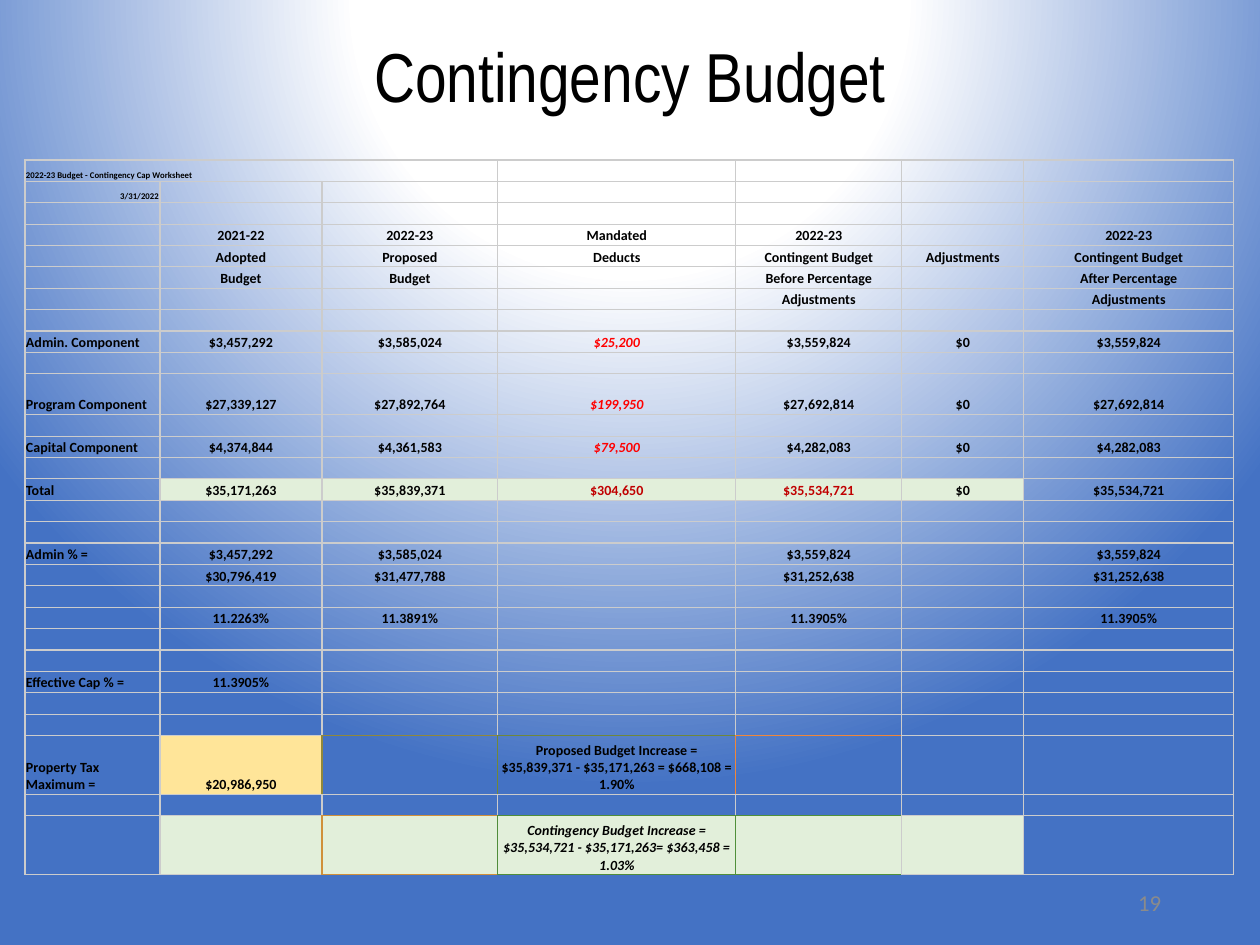
from lxml import etree
from pptx import Presentation
from pptx import util as u
from pptx.dml.color import RGBColor
from pptx.enum import text
from pptx.oxml import parse_xml
from pptx.oxml.ns import nsdecls, qn

COLORS = {"black": "000000", "white": "FFFFFF", "blue": "4472C4", "grid": "CCCCCC",
          "red": "FF0000", "dark_red": "C00000", "green": "E2EFDA",
          "yellow": "FFE599", "page": "8B8B8B"}


def px(n):
    return u.Emu(round(n * 914400 / 126))


def format_text(paragraph, size, color, font="Calibri", align=text.PP_ALIGN.CENTER):
    paragraph.alignment = align
    paragraph.font.name = font
    paragraph.font.size = u.Pt(size)
    paragraph.font.color.rgb = RGBColor.from_string(COLORS[color])


prs = Presentation()
prs.slide_width, prs.slide_height = px(1260), px(945)
slide = prs.slides.add_slide(prs.slide_layouts[5])

# Background: white glow from the top, fading to blue
slide.background.fill.gradient()
glow = slide._element.find(".//" + qn("a:gradFill"))
stops = "".join(f'<a:gs pos="{pos}"><a:srgbClr val="{COLORS[name]}"/></a:gs>'
                for pos, name in ((0, "white"), (35000, "white"), (100000, "blue")))
glow.getparent().replace(glow, parse_xml(
    f'<a:gradFill {nsdecls("a")} rotWithShape="1"><a:gsLst>{stops}</a:gsLst>'
    '<a:path path="circle"><a:fillToRect l="50000" t="-80000" r="50000" b="180000"/>'
    '</a:path></a:gradFill>'))

# Title
title = slide.shapes.title
title.left, title.top, title.width, title.height = px(87), px(43), px(1086), px(74)
title.text_frame.text = "Contingency Budget"
title.text_frame.auto_size = text.MSO_AUTO_SIZE.NONE
title.text_frame.vertical_anchor = text.MSO_ANCHOR.MIDDLE
heading = title.text_frame.paragraphs[0]
heading.line_spacing = 0.9
format_text(heading, 39.6, "black", "Arial Narrow")

# Worksheet content: row number -> cells from the left
worksheet = {
    0: ["2022-23 Budget - Contingency Cap Worksheet"],
    1: ["3/31/2022"],
    3: ["", "2021-22", "2022-23", "Mandated", "2022-23", "", "2022-23"],
    4: ["", "Adopted", "Proposed", "Deducts", "Contingent Budget", "Adjustments",
        "Contingent Budget"],
    5: ["", "Budget", "Budget", "", "Before Percentage", "", "After Percentage"],
    6: ["", "", "", "", "Adjustments", "", "Adjustments"],
    8: ["Admin. Component", "$3,457,292", "$3,585,024", "$25,200", "$3,559,824", "$0",
        "$3,559,824"],
    10: ["Program Component", "$27,339,127", "$27,892,764", "$199,950", "$27,692,814", "$0",
         "$27,692,814"],
    12: ["Capital Component", "$4,374,844", "$4,361,583", "$79,500", "$4,282,083", "$0",
         "$4,282,083"],
    14: ["Total", "$35,171,263", "$35,839,371", "$304,650", "$35,534,721", "$0",
         "$35,534,721"],
    17: ["Admin % =", "$3,457,292", "$3,585,024", "", "$3,559,824", "", "$3,559,824"],
    18: ["", "$30,796,419", "$31,477,788", "", "$31,252,638", "", "$31,252,638"],
    20: ["", "11.2263%", "11.3891%", "", "11.3905%", "", "11.3905%"],
    23: ["Effective Cap % =", "11.3905%"],
    26: ["Property Tax Maximum =", "$20,986,950", "",
         "Proposed Budget Increase = $35,839,371 - $35,171,263 = $668,108 = 1.90%"],
    28: ["", "", "",
         "Contingency Budget Increase = $35,534,721 - $35,171,263= $363,458 = 1.03%"],
}
TOTAL, PROPOSED, CONTINGENCY, ROWS = 14, 26, 28, 29
deducts = {(row, 3) for row in (8, 10, 12)}
fills = {(row, col): "green" for row in (TOTAL, CONTINGENCY) for col in range(1, 6)}
fills[PROPOSED, 1] = "yellow"
text_colors = {cell: "red" for cell in deducts}
text_colors.update({(TOTAL, 3): "dark_red", (TOTAL, 4): "dark_red"})
italics = deducts | {(CONTINGENCY, 3)}

# Coloured edges, shared with the neighbours to the left and above
accents = {PROPOSED: ["90883A", "70873A", "F0873A"],
           CONTINGENCY: ["D0903A", "508D3A", "50903A"]}
edges = {}
for row, row_accents in accents.items():
    for col, accent in enumerate(row_accents, 2):
        edges[row, col, "L"] = edges[row, col - 1, "R"] = accent
        edges[row, col, "T"] = edges[row - 1, col, "B"] = accent
        if row == CONTINGENCY:
            edges[row, col, "B"] = accent

# Table grid
widths = [135, 162, 176, 238, 166, 122, 210]
tall_rows = {10: 41, PROPOSED: 59, CONTINGENCY: 59}
table_height = 716
row_height = (table_height - sum(tall_rows.values())) / (ROWS - len(tall_rows))
budget = slide.shapes.add_table(ROWS, len(widths), px(25), px(160),
                                px(sum(widths)), px(table_height)).table
budget.first_row = budget.horz_banding = False
for col, width in enumerate(widths):
    budget.columns[col].width = px(width)
for row in range(ROWS):
    budget.rows[row].height = px(tall_rows.get(row, row_height))

# Table cells
for row in range(ROWS):
    values = worksheet.get(row, [])
    for col in range(len(widths)):
        cell = budget.cell(row, col)
        cell.margin_left = cell.margin_right = cell.margin_top = cell.margin_bottom = px(1)
        cell.vertical_anchor = text.MSO_ANCHOR.BOTTOM
        if (row, col) in fills:
            cell.fill.solid()
            cell.fill.fore_color.rgb = RGBColor.from_string(COLORS[fills[row, col]])
        else:
            cell.fill.background()
        for place, side in enumerate("LRTB"):
            edge = edges.get((row, col, side), COLORS["grid"])
            cell._tc.get_or_add_tcPr().insert(place, parse_xml(
                f'<a:ln{side} {nsdecls("a")} w="9525"><a:solidFill>'
                f'<a:srgbClr val="{edge}"/></a:solidFill></a:ln{side}>'))

        if col < len(values) and values[col]:
            cell.text = values[col]
            entry = cell.text_frame.paragraphs[0]
            align = text.PP_ALIGN.CENTER
            if col == 0:
                align = text.PP_ALIGN.RIGHT if row == 1 else text.PP_ALIGN.LEFT
            format_text(entry, 5 if row < 2 else 8,
                        text_colors.get((row, col), "black"), align=align)
            entry.font.bold = True
            entry.font.italic = (row, col) in italics
        else:
            blank = cell.text_frame.paragraphs[0]
            etree.SubElement(blank._p, qn("a:endParaRPr"), sz="800")
budget.cell(0, 0).merge(budget.cell(0, 2))

# Page number
page = slide.shapes.add_textbox(px(1050), px(882), px(111), px(40)).text_frame
page.word_wrap = True
page.margin_left = page.margin_right = 0
page.vertical_anchor = text.MSO_ANCHOR.MIDDLE
page.text = "19"
format_text(page.paragraphs[0], 13, "page", align=text.PP_ALIGN.RIGHT)

prs.save("out.pptx")
